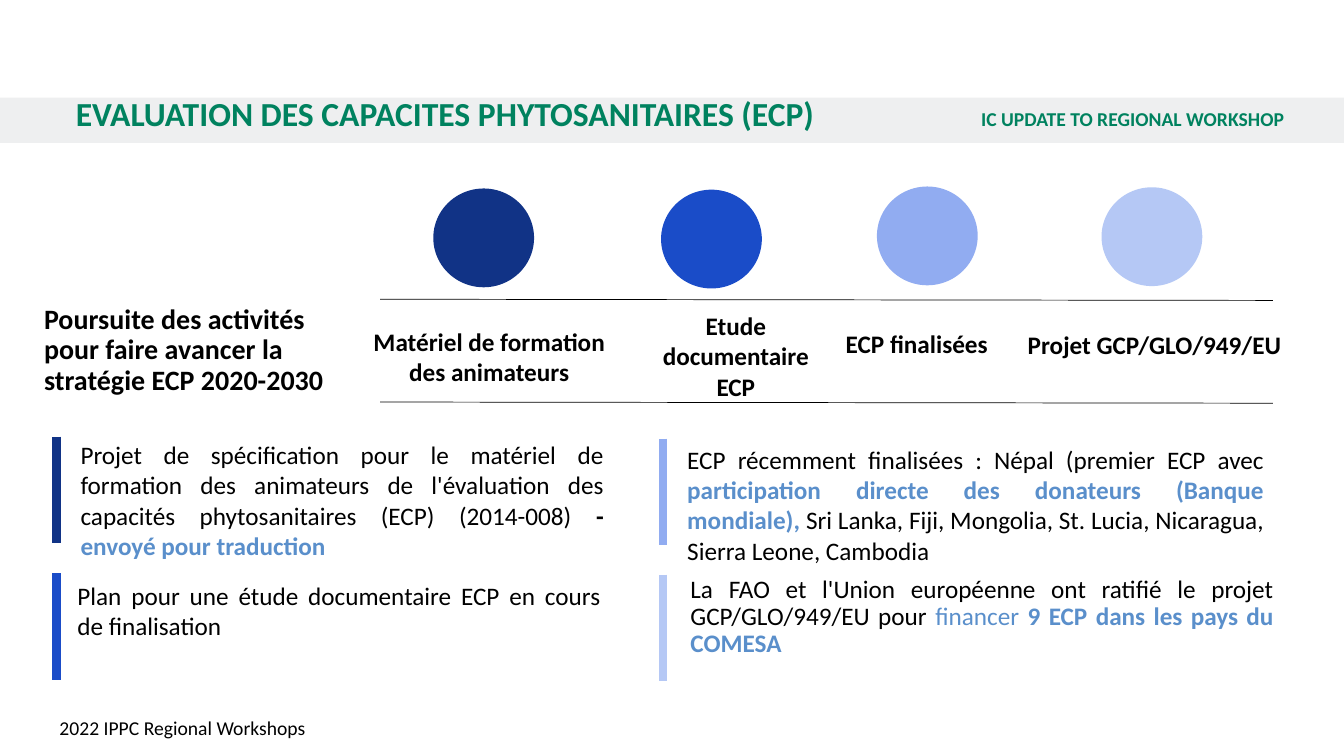
from dataclasses import dataclass
from typing import Optional

from lxml import etree
from pptx import Presentation
from pptx.dml.color import RGBColor
from pptx.enum.shapes import MSO_CONNECTOR, MSO_SHAPE
from pptx.enum.text import MSO_ANCHOR, PP_ALIGN
from pptx.oxml.ns import qn
from pptx.util import Cm, Pt

RECT, OVAL, LINE = MSO_SHAPE.RECTANGLE, MSO_SHAPE.OVAL, MSO_CONNECTOR.STRAIGHT
LEFT, CENTER, RIGHT, JUSTIFY = PP_ALIGN.LEFT, PP_ALIGN.CENTER, PP_ALIGN.RIGHT, PP_ALIGN.JUSTIFY
TOP, MIDDLE = MSO_ANCHOR.TOP, MSO_ANCHOR.MIDDLE

BLACK = RGBColor(0x00, 0x00, 0x00)
GREEN = RGBColor(0x00, 0x82, 0x5F)
SKY = RGBColor(0x5A, 0x8F, 0xCB)
BAND_GREY = RGBColor(0xD8, 0xD9, 0xDC)
NAVY = RGBColor(0x11, 0x33, 0x86)
ROYAL = RGBColor(0x1A, 0x4C, 0xC8)
PERIWINKLE = RGBColor(0x91, 0xAC, 0xF1)
PALE = RGBColor(0xB5, 0xC8, 0xF5)

FONT = "Calibri"
WIDTH, HEIGHT = 33.87, 19.05
CIRCLE_W, CIRCLE_H = 2.54, 2.49
BAR_HEIGHT = 2.69
RULE_LEFT, RULE_RIGHT = 9.58, 32.08


@dataclass
class Run:
    text: str
    color: RGBColor = BLACK
    bold: bool = False


@dataclass
class Block:
    x: float
    y: float
    w: float
    h: float
    runs: list[Run]
    size: float = 18
    align: PP_ALIGN = LEFT
    spacing: float = 1.0
    anchor: MSO_ANCHOR = TOP
    insets: Optional[tuple[float, float, float, float]] = None
    wrap: bool = True


@dataclass
class Topic:
    color: RGBColor
    circle: tuple[float, float]
    bar: tuple[float, float]
    label: Block
    body: Block


def fill_text(sp, block: Block) -> None:
    tf = sp.text_frame
    tf.word_wrap = block.wrap
    tf.vertical_anchor = block.anchor
    if block.insets:
        (tf.margin_left, tf.margin_top,
         tf.margin_right, tf.margin_bottom) = map(Cm, block.insets)
    p = tf.paragraphs[0]
    p.alignment = block.align
    p.line_spacing = block.spacing
    for run in block.runs:
        r = p.add_run()
        r.text = run.text
        r.font.name = FONT
        r.font.size = Pt(block.size)
        r.font.bold = run.bold
        r.font.color.rgb = run.color


def add_text(s, block: Block) -> None:
    sp = s.shapes.add_textbox(Cm(block.x), Cm(block.y), Cm(block.w), Cm(block.h))
    fill_text(sp, block)


def add_filled(s, kind, x: float, y: float, w: float, h: float, color: RGBColor):
    sp = s.shapes.add_shape(kind, Cm(x), Cm(y), Cm(w), Cm(h))
    sp.shadow.inherit = False
    sp.fill.solid()
    sp.fill.fore_color.rgb = color
    sp.line.fill.background()
    return sp


def add_line(s, x1: float, y1: float, x2: float, y2: float,
             color: RGBColor, width: float) -> None:
    c = s.shapes.add_connector(LINE, Cm(x1), Cm(y1), Cm(x2), Cm(y2))
    c.line.color.rgb = color
    c.line.width = Pt(width)
    etree.SubElement(c.element.spPr, qn("a:effectLst"))


def label(x: float, y: float, w: float, h: float, text: str, wrap: bool = True) -> Block:
    return Block(x, y, w, h, [Run(text, bold=True)], align=CENTER, wrap=wrap)


def body(x: float, y: float, w: float, h: float, *runs: Run, **options) -> Block:
    return Block(x, y, w, h, list(runs), align=JUSTIFY, **options)


EDGE_INSETS = (1.5, 0.13, 1.5, 0.13)
TITLE_INSETS = (1.5, 0, 1, 0.13)

BAND = Block(0, 2.46, WIDTH, 1.14, [Run("IC UPDATE TO REGIONAL WORKSHOP", GREEN, True)],
             14, RIGHT, 0.9, MIDDLE, EDGE_INSETS)
HEADINGS = [
    Block(0, 17.93, WIDTH, 0.89, [Run("2022 IPPC Regional Workshops")],
          14, LEFT, 0.9, MIDDLE, EDGE_INSETS),
    Block(0.41, 2.46, 21.18, 1.24,
          [Run("EVALUATION DES CAPACITES PHYTOSANITAIRES (ECP)", GREEN, True)],
          24, LEFT, 0.9, TOP, TITLE_INSETS),
    Block(0.86, 7.57, 8.46, 2.57,
          [Run("Poursuite des activités pour faire avancer la stratégie ECP 2020-2030",
               bold=True)], 20, LEFT, 0.9),
]
TOPICS = [
    Topic(NAVY, (10.92, 4.75), (1.42, 11),
          label(9.09, 8.1, 6.48, 1.8, "Matériel de formation des animateurs"),
          body(1.78, 10.95, 13.69, 3.33,
               Run("Projet de spécification pour le matériel de formation des animateurs "
                   "de l'évaluation des capacités phytosanitaires (ECP) (2014-008) "),
               Run("- ", bold=True),
               Run("envoyé pour traduction", SKY, True))),
    Topic(ROYAL, (16.66, 4.78), (1.42, 14.45),
          label(16.03, 7.7, 5.03, 2.57, "Etude documentaire ECP"),
          body(1.7, 14.5, 13.69, 1.8,
               Run("Plan pour une étude documentaire ECP en cours de finalisation"))),
    Topic(PERIWINKLE, (22.1, 4.7), (16.71, 11.05),
          label(21.06, 8.15, 4.09, 1.02, "ECP finalisées", wrap=False),
          body(17.07, 11.07, 15.04, 3.33,
               Run("ECP récemment finalisées : Népal (premier ECP avec "),
               Run("participation directe des donateurs (Banque mondiale), ", SKY, True),
               Run("Sri Lanka, Fiji, Mongolia, St. Lucia, Nicaragua, "
                   "Sierra Leone, Cambodia"))),
    Topic(PALE, (27.76, 4.72), (16.71, 14.48),
          label(25.6, 8.18, 6.99, 1.02, "Projet GCP/GLO/949/EU", wrap=False),
          body(15.9, 14.53, 17.2, 3.68,
               Run("La FAO et l'Union européenne ont ratifié le projet "
                   "GCP/GLO/949/EU pour "),
               Run("financer ", SKY),
               Run("9 ECP dans les pays du COMESA", SKY, True),
               spacing=0.9, insets=TITLE_INSETS)),
]


def main() -> None:
    prs = Presentation()
    prs.slide_width, prs.slide_height = Cm(WIDTH), Cm(HEIGHT)
    s = prs.slides.add_slide(prs.slide_layouts[6])

    # Translucent header band
    band = add_filled(s, RECT, BAND.x, BAND.y, BAND.w, BAND.h, BAND_GREY)
    color = band.element.spPr.find(qn("a:solidFill"))[0]
    etree.SubElement(color, qn("a:alpha"), val="42000")
    fill_text(band, BAND)

    # Title, left heading and footer
    for heading in HEADINGS:
        add_text(s, heading)

    # Four topics: circle, label, accent bar and description
    for topic in TOPICS:
        add_filled(s, OVAL, *topic.circle, CIRCLE_W, CIRCLE_H, topic.color)
        add_text(s, topic.label)
        add_text(s, topic.body)
        x, y = topic.bar
        add_line(s, x, y, x, y + BAR_HEIGHT, topic.color, 6)

    # Thin rules above and below the labels
    for y in (7.54, 10.13):
        add_line(s, RULE_LEFT, y, RULE_RIGHT, y + 0.03, BLACK, 0.5)

    prs.save("out.pptx")


if __name__ == "__main__":
    main()
